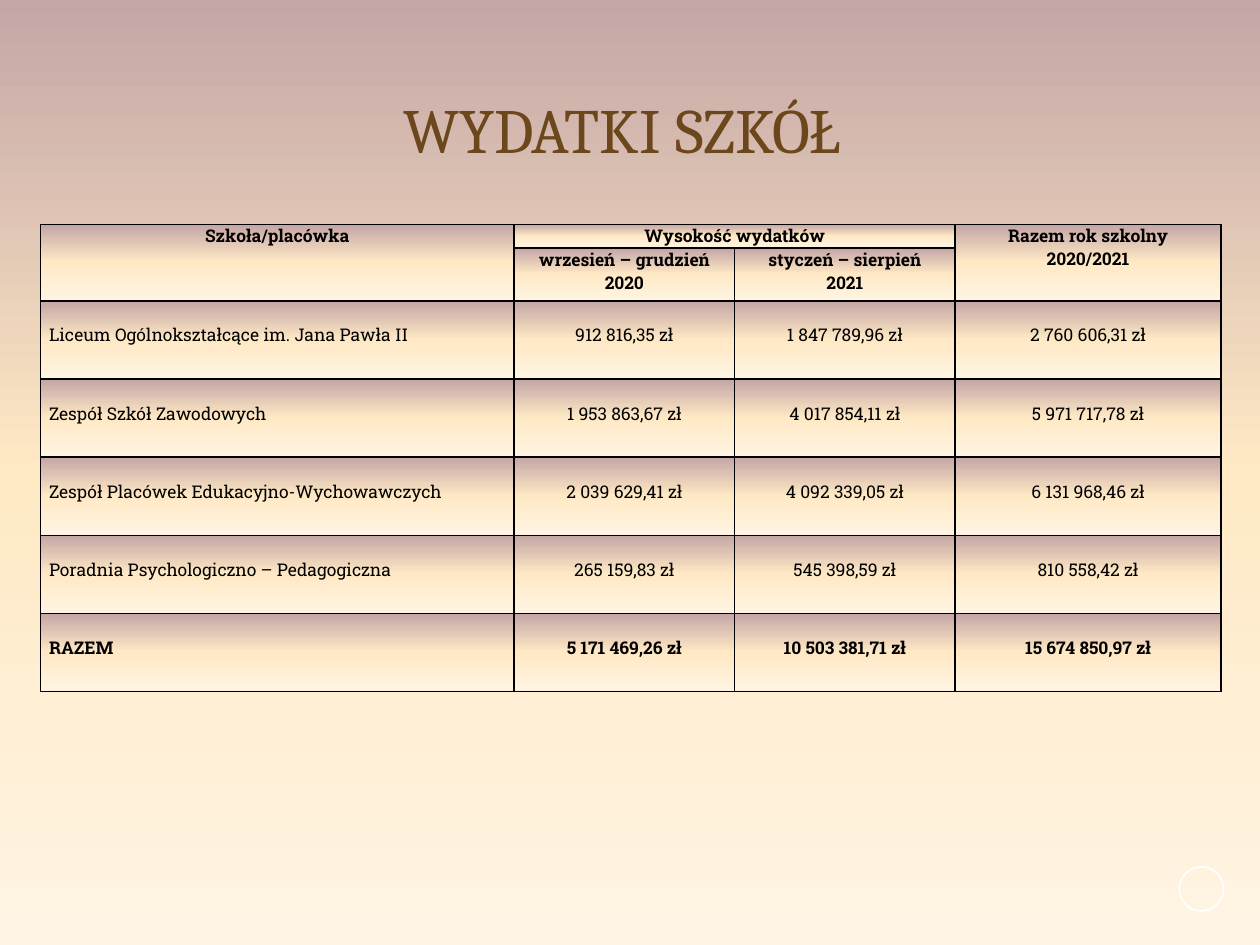
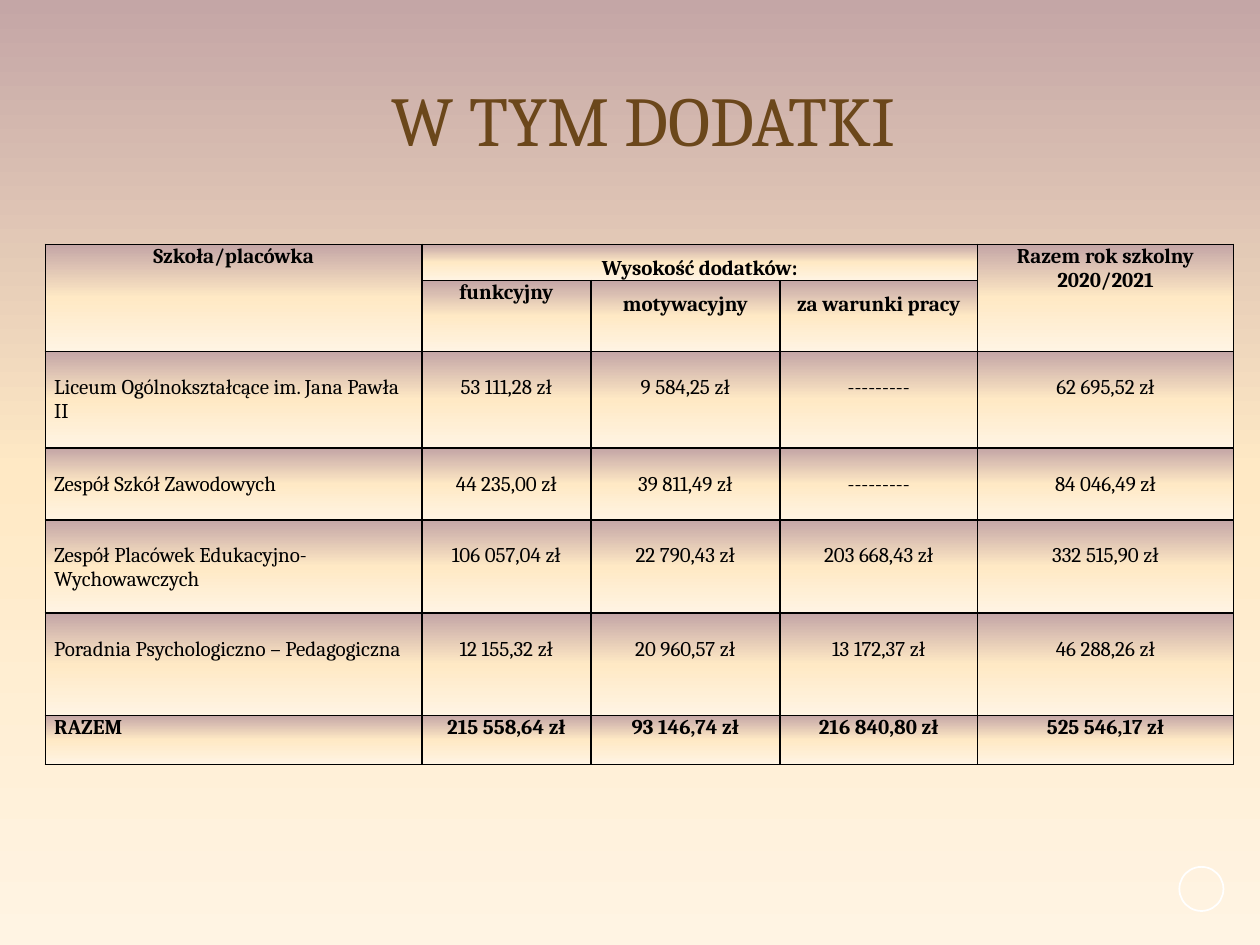
"""Build two slides with tables of school spending and salary supplements."""
import copy

from lxml import etree
from pptx import Presentation
from pptx.dml.color import RGBColor
from pptx.enum import shapes, text
from pptx.oxml.ns import qn
from pptx.util import Inches, Pt

COLORS = {"mauve": "C4A6A6", "cream": "FFE9C5", "ivory": "FFF4E3",
          "title": "6B471B", "ink": "000000", "ring": "FFFFFF"}
GRADIENT = [(0, "mauve"), (0.5, "cream"), (1, "ivory")]

SCHOOLS = ["Liceum Ogólnokształcące im. Jana Pawła II", "Zespół Szkół Zawodowych",
           "Zespół Placówek Edukacyjno-Wychowawczych",
           "Poradnia Psychologiczno – Pedagogiczna", "RAZEM"]

SLIDES = [
    {"title": "WYDATKI SZKÓŁ", "title_at": (0.2, 0.6), "title_size": 36,
     "font": "Roboto Slab", "size": 10, "table_at": (0.32, 1.78),
     "cols": [3.76, 1.75, 1.75, 2.11],
     "rows": [0.19, 0.42] + [0.62] * 5,
     "drop": 0.18, "total_drop": 0.18, "spaced": [],
     "group": "Wysokość wydatków",
     "heads": ["wrzesień – grudzień\n2020", "styczeń – sierpień\n2021"],
     "values": [["912 816,35 zł", "1 847 789,96 zł", "2 760 606,31 zł"],
                ["1 953 863,67 zł", "4 017 854,11 zł", "5 971 717,78 zł"],
                ["2 039 629,41 zł", "4 092 339,05 zł", "6 131 968,46 zł"],
                ["265 159,83 zł", "545 398,59 zł", "810 558,42 zł"],
                ["5 171 469,26 zł", "10 503 381,71 zł", "15 674 850,97 zł"]]},
    {"title": "W TYM DODATKI", "title_at": (0.36, 0.52), "title_size": 40,
     "font": "Cambria", "size": 12, "table_at": (0.36, 1.94),
     "cols": [2.99, 1.34, 1.5, 1.57, 2.03],
     "rows": [0.28, 0.56, 0.77, 0.57, 0.74, 0.81, 0.39],
     "drop": 0.19, "total_drop": 0,
     "spaced": ["Wysokość dodatków:", "motywacyjny", "za warunki pracy"],
     "group": "Wysokość dodatków:",
     "heads": ["funkcyjny", "motywacyjny", "za warunki pracy"],
     "values": [["53 111,28 zł", "9 584,25 zł", "---------", "62 695,52 zł"],
                ["44 235,00 zł", "39 811,49 zł", "---------", "84 046,49 zł"],
                ["106 057,04 zł", "22 790,43 zł", "203 668,43 zł", "332 515,90 zł"],
                ["12 155,32 zł", "20 960,57 zł", "13 172,37 zł", "46 288,26 zł"],
                ["215 558,64 zł", "93 146,74 zł", "216 840,80 zł", "525 546,17 zł"]]},
]


def fill_gradient(fill):
    fill.gradient()
    fill.gradient_angle = 270
    gs = fill.gradient_stops._gsLst
    gs.append(copy.deepcopy(gs[1]))
    for stop, (position, name) in zip(fill.gradient_stops, GRADIENT):
        stop.position = position
        stop.color.rgb = RGBColor.from_string(COLORS[name])


def add_run(p, words, font, size, color, bold=False):
    r = p.add_run()
    r.text = words
    r.font.name, r.font.size, r.font.bold = font, Pt(size), bold
    r.font.color.rgb = RGBColor.from_string(COLORS[color])


prs = Presentation()
prs.slide_width, prs.slide_height = Inches(10), Inches(7.5)
fill_gradient(prs.slide_master.background.fill)

for data in SLIDES:
    s = prs.slides.add_slide(prs.slide_layouts[5])
    ring = s.shapes.add_shape(shapes.MSO_SHAPE.OVAL, Inches(9.36), Inches(6.88),
                              Inches(0.35), Inches(0.35))
    ring.shadow.inherit = False
    ring.fill.background()
    ring.line.color.rgb = RGBColor.from_string(COLORS["ring"])
    ring.line.width = Pt(1)

    title = s.shapes.title
    title.left, title.top = [Inches(v) for v in data["title_at"]]
    title.width, title.height = Inches(9.5), Inches(0.92)
    tf = title.text_frame
    tf.auto_size = text.MSO_AUTO_SIZE.NONE
    tf.vertical_anchor = text.MSO_ANCHOR.MIDDLE
    p = tf.paragraphs[0]
    p.alignment, p.line_spacing = text.PP_ALIGN.CENTER, 0.9
    add_run(p, data["title"], "Cambria", data["title_size"], "title")

    cols, rows = data["cols"], data["rows"]
    left, top = data["table_at"]
    table = s.shapes.add_table(len(rows), len(cols), Inches(left), Inches(top),
                               Inches(sum(cols)), Inches(sum(rows))).table
    table.first_row = table.horz_banding = False
    for column, width in zip(table.columns, cols):
        column.width = Inches(width)
    for row, height in zip(table.rows, rows):
        row.height = Inches(height)

    last_col, last_row = len(cols) - 1, len(rows) - 1
    table.cell(0, 0).merge(table.cell(1, 0))
    table.cell(0, 1).merge(table.cell(0, last_col - 1))
    table.cell(0, last_col).merge(table.cell(1, last_col))

    grid = [["Szkoła/placówka", data["group"]] + [""] * (last_col - 2)
            + ["Razem rok szkolny\n2020/2021"],
            [""] + data["heads"] + [""]]
    grid += [[school] + values for school, values in zip(SCHOOLS, data["values"])]

    for i, line in enumerate(grid):
        for j, words in enumerate(line):
            cell = table.cell(i, j)
            tcPr = cell._tc.get_or_add_tcPr()
            for side in ("a:lnL", "a:lnR", "a:lnT", "a:lnB"):
                ln = etree.SubElement(tcPr, qn(side), w=str(Pt(1)))
                solid = etree.SubElement(ln, qn("a:solidFill"))
                etree.SubElement(solid, qn("a:srgbClr"), val=COLORS["ink"])
            fill_gradient(cell.fill)
            drop = 0 if i < 2 else data["total_drop"] if i == last_row else data["drop"]
            cell.margin_left = cell.margin_right = Inches(0.07)
            cell.margin_top, cell.margin_bottom = Inches(drop), 0
            if not words:
                continue
            tf = cell.text_frame
            for k, part in enumerate(words.split("\n")):
                p = tf.add_paragraph() if k else tf.paragraphs[0]
                centred = i < 2 or j > 0
                p.alignment = text.PP_ALIGN.CENTER if centred else text.PP_ALIGN.LEFT
                if part in data["spaced"]:
                    p.line_spacing = 1.5
                add_run(p, part, data["font"], data["size"], "ink", i < 2 or i == last_row)

prs.save("out.pptx")
